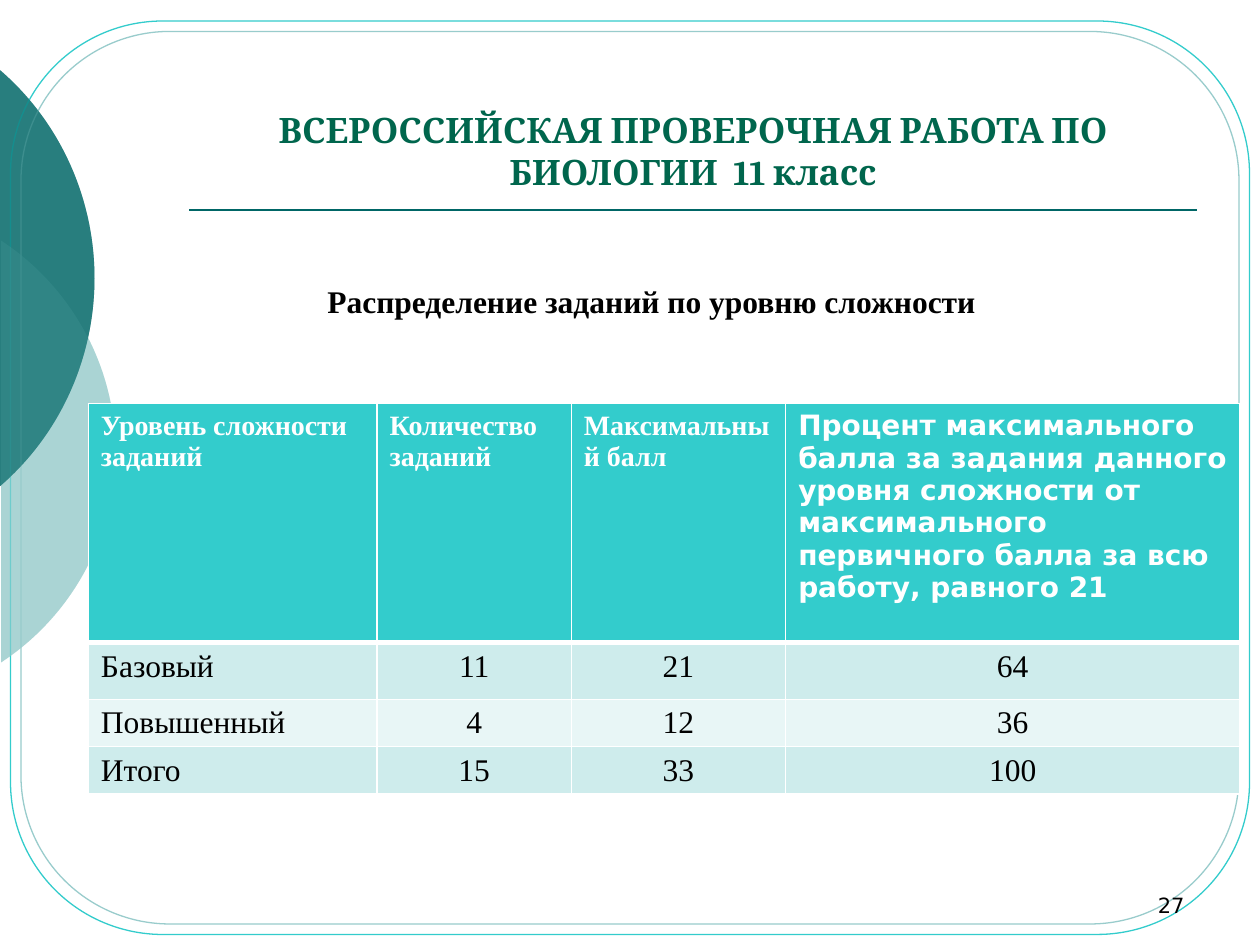
from lxml.etree import SubElement
from pptx import Presentation
from pptx.dml.color import RGBColor
from pptx.enum.shapes import MSO_CONNECTOR, MSO_SHAPE
from pptx.enum.text import MSO_ANCHOR, PP_ALIGN
from pptx.oxml.ns import qn
from pptx.util import Pt

COLORS = {"teal": "006666", "aqua": "33CCCC", "mist": "99CCCC",
          "title": "00664D", "black": "000000", "white": "FFFFFF",
          "band1": "CEECEC", "band2": "E8F6F6"}
SERIF = "Times New Roman"


def rgb(name):
    return RGBColor.from_string(COLORS[name])


def write(tf, text, align, color, **font):
    p = tf.paragraphs[0]
    p.alignment = align
    r = p.add_run()
    r.text = text
    r.font.color.rgb = rgb(color)
    for key, value in font.items():
        setattr(r.font, key, value)


prs = Presentation()
prs.slide_width, prs.slide_height = Pt(720), Pt(540)
s = prs.slides.add_slide(prs.slide_layouts[6])

# Translucent circle segments at the left edge, laid twice around the frames:
# left, top, diameter, upper half of the arc, colour, opacity
circles = [
    (-222, 114, 288, [(0.7, 137.5), (41, 164), (66, 209.5), (66, 258)], "mist", 58),
    (-264, 0, 318, [(-0.7, 39.5), (34, 69), (54, 113), (54, 159)], "teal", 60),
]
for layer in range(2):
    for x, y, d, upper, color, opacity in circles:
        builder = s.shapes.build_freeform(x, y, scale=Pt(1))
        builder.add_line_segments([(x + d, y), (x + d, y + d), (x, y + d)])
        sp = builder.convert_to_shape()
        sp.shadow.inherit = False
        sp.fill.solid()
        sp.fill.fore_color.rgb = rgb(color)
        sp.line.fill.background()
        clr = sp._element.spPr.find(qn("a:solidFill"))[0]
        SubElement(clr, qn("a:alpha"), val=str(opacity * 1000))

        # Curved outline, the lower half mirroring the upper one
        lower = [(px, 2 * y + d - py) for px, py in upper[-2::-1]]
        outline = next(sp._element.iter(qn("a:path")))
        for child in list(outline):
            outline.remove(child)
        for key in "wh":
            outline.set(key, str(Pt(d)))
        for tag, points in [("moveTo", upper[:1]), ("cubicBezTo", upper[1:]),
                            ("cubicBezTo", lower)]:
            segment = SubElement(outline, qn("a:" + tag))
            for px, py in points:
                SubElement(segment, qn("a:pt"), x=str(Pt(px - x)), y=str(Pt(py - y)))
        SubElement(outline, qn("a:close"))
    if layer:
        break

    # Rounded frames
    for x, y, w, h, color in [(6, 12, 708, 522, "aqua"), (12, 18, 696, 510, "mist")]:
        sp = s.shapes.add_shape(MSO_SHAPE.ROUNDED_RECTANGLE, Pt(x), Pt(y), Pt(w), Pt(h))
        sp.shadow.inherit = False
        sp.fill.background()
        sp.line.color.rgb = rgb(color)
        sp.line.width = Pt(0.75)

    # Rule under the title
    rule = s.shapes.add_connector(MSO_CONNECTOR.STRAIGHT, Pt(108), Pt(120), Pt(684), Pt(120))
    rule.line.color.rgb = rgb("teal")
    rule.line.width = Pt(1)
    SubElement(rule._element.spPr, qn("a:effectLst"))

# Title, page number and table heading
texts = [
    ((108, 23.5, 576, 90), "ВСЕРОССИЙСКАЯ ПРОВЕРОЧНАЯ РАБОТА ПО БИОЛОГИИ  11 класс",
     MSO_ANCHOR.BOTTOM, PP_ALIGN.CENTER, "title", 20, "Cambria", True),
    ((516, 492, 168, 36), "27",
     MSO_ANCHOR.BOTTOM, PP_ALIGN.RIGHT, "black", 12, "DejaVu Sans", False),
    ((180, 157.5, 444, 29), "Распределение заданий по уровню сложности",
     MSO_ANCHOR.TOP, PP_ALIGN.LEFT, "black", 18, SERIF, True),
]
for box, text, anchor, align, color, size, name, bold in texts:
    tf = s.shapes.add_textbox(*map(Pt, box)).text_frame
    tf.word_wrap = True
    tf.vertical_anchor = anchor
    write(tf, text, align, color, size=Pt(size), name=name, bold=bold)

# Table of difficulty levels
rows = [
    ("Уровень сложности заданий", "Количество заданий", "Максимальный балл",
     "Процент максимального балла за задания данного уровня сложности "
     "от максимального первичного балла за всю работу, равного 21"),
    ("Базовый", "11", "21", "64"),
    ("Повышенный", "4", "12", "36"),
    ("Итого", "15", "33", "100"),
]
widths, heights = [165, 111, 122.5, 259.5], [136.5, 32.5, 27, 27]
table = s.shapes.add_table(len(rows), len(widths), Pt(50.5), Pt(230.7),
                           Pt(sum(widths)), Pt(sum(heights))).table
for column, width in zip(table.columns, widths):
    column.width = Pt(width)
for row, height in zip(table.rows, heights):
    row.height = Pt(height)

for i, row in enumerate(rows):
    for j, text in enumerate(row):
        cell = table.cell(i, j)
        tcPr = cell._tc.get_or_add_tcPr()
        for side in "LRTB":
            thick = (i == 0 and side == "B") or (i == 1 and side == "T")
            ln = SubElement(tcPr, qn("a:ln" + side), w=str(Pt(3 if thick else 1)))
            SubElement(SubElement(ln, qn("a:solidFill")), qn("a:srgbClr"), val=COLORS["white"])
        cell.fill.solid()
        cell.fill.fore_color.rgb = rgb("aqua" if i == 0 else "band1" if i % 2 else "band2")
        if i == 0:
            write(cell.text_frame, text, PP_ALIGN.LEFT, "white", size=Pt(16), bold=True,
                  name="DejaVu Sans" if j == 3 else SERIF)
        else:
            cell.margin_bottom = Pt(1.5)
            write(cell.text_frame, text, PP_ALIGN.CENTER if j else PP_ALIGN.LEFT, "black",
                  size=Pt(18), bold=False, name=SERIF)

prs.save("out.pptx")
